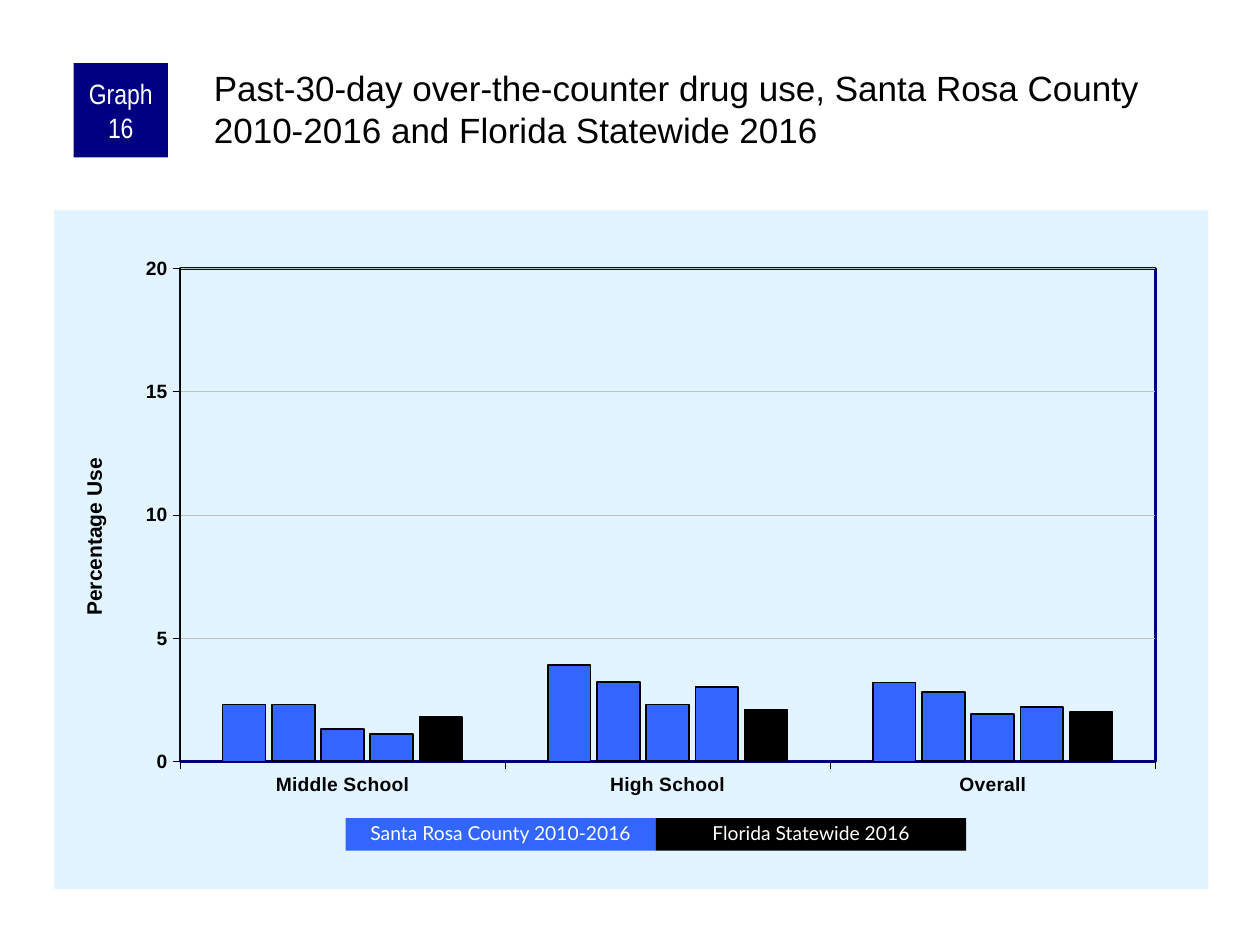
"""Builds the slide on past-30-day over-the-counter drug use."""
from lxml import etree
from pptx import Presentation
from pptx.chart.data import CategoryChartData
from pptx.dml.color import RGBColor
from pptx.enum.chart import XL_CHART_TYPE, XL_TICK_MARK
from pptx.enum.shapes import MSO_SHAPE
from pptx.enum.text import MSO_ANCHOR, MSO_AUTO_SIZE, PP_ALIGN
from pptx.oxml import parse_xml
from pptx.oxml.ns import nsdecls, qn
from pptx.util import Pt

COLUMNS = XL_CHART_TYPE.COLUMN_CLUSTERED
OUTSIDE, NO_TICK = XL_TICK_MARK.OUTSIDE, XL_TICK_MARK.NONE
RECTANGLE = MSO_SHAPE.RECTANGLE
TOP, MIDDLE = MSO_ANCHOR.TOP, MSO_ANCHOR.MIDDLE
LEFT, CENTER = PP_ALIGN.LEFT, PP_ALIGN.CENTER
NO_AUTOSIZE = MSO_AUTO_SIZE.NONE

HEADING = ("Past-30-day over-the-counter drug use, Santa Rosa County "
           "2010-2016 and Florida Statewide 2016")
BADGE = "Graph 16"
AXIS_TITLE = "Percentage Use"
SCHOOLS = ["Middle School", "High School", "Overall"]
SURVEYS = [
    ("Series 1", (2.3, 3.9, 3.2), "county", 0.75),
    ("Series 2", (2.3, 3.2, 2.8), "county", 1),
    ("Series 3", (1.3, 2.3, 1.9), "county", 1),
    ("Series 4", (1.1, 3, 2.2), "county", 1),
    ("Series 5", (1.8, 2.1, 2), "state", 1),
]
LEGEND = [("Santa Rosa County 2010-2016", "county"),
          ("Florida Statewide 2016", "state")]

THEME = {
    "county": "3366FF", "state": "000000", "navy": "000080", "panel": "E1F4FF",
    "grid": "C0C0C0", "ink": "000000", "light": "FFFFFF",
    "font": "Arial", "badge_font": "Arial Narrow", "legend_font": "Lato",
    "heading": 20, "badge": 16, "axis_title": 12, "label": 11, "chart": 8,
}
HEADING_BOX = (120, 36, 570, 60)
BADGE_BOX = (42, 36, 54, 54)
CHART_BOX = (31, 120, 659.5, 388)
LEGEND_BOX = (197.5, 467.5, 177.3, 18.7)
PLOT_LAYOUT = {"x": 0.109, "y": 0.086, "w": 0.845, "h": 0.726}
AXIS_TITLE_LAYOUT = {"x": 0.02, "y": 0.36}


def colour(key):
    return RGBColor.from_string(THEME[key])


def style_font(font, size, ink="ink", face="font", bold=False):
    font.size, font.name, font.bold = Pt(THEME[size]), THEME[face], bold
    font.color.rgb = colour(ink)


def style_line(line, key, width):
    line.color.rgb = colour(key)
    line.width = Pt(width)


def write(frame, text, align=CENTER, anchor=MIDDLE, insets=(7.2, 3.6, 7.2, 3.6),
          spacing=1.0, **font):
    frame.word_wrap, frame.auto_size = True, NO_AUTOSIZE
    frame.vertical_anchor = anchor
    (frame.margin_left, frame.margin_top,
     frame.margin_right, frame.margin_bottom) = map(Pt, insets)
    paragraph = frame.paragraphs[0]
    paragraph.alignment, paragraph.line_spacing = align, spacing
    run = paragraph.add_run()
    run.text = text
    style_font(run.font, **font)


def add_block(slide, box, fill, text, **text_format):
    block = slide.shapes.add_shape(RECTANGLE, *map(Pt, box))
    block.shadow.inherit = False
    block.fill.solid()
    block.fill.fore_color.rgb = colour(fill)
    block.line.fill.background()
    write(block.text_frame, text, ink="light", **text_format)


def manual_layout(parent, position, successors, inner=False):
    for stale in parent.findall(qn("c:layout")):
        parent.remove(stale)
    layout = parse_xml(f"<c:layout {nsdecls('c')}><c:manualLayout/></c:layout>")
    settings = {"layoutTarget": "inner"} if inner else {}
    settings.update(xMode="edge", yMode="edge", **position)
    for tag, value in settings.items():
        etree.SubElement(layout[0], qn(f"c:{tag}")).set("val", str(value))
    parent.insert_element_before(layout, *successors)


def shape_properties(fill="", line=""):
    parts = f'<a:solidFill><a:srgbClr val="{THEME[fill]}"/></a:solidFill>' if fill else "<a:noFill/>"
    stroke = (f'<a:ln w="{Pt(1.5)}"><a:solidFill><a:srgbClr val="{THEME[line]}"/>'
              "</a:solidFill></a:ln>" if line else "<a:ln><a:noFill/></a:ln>")
    return parse_xml(f"<c:spPr {nsdecls('c', 'a')}>{parts}{stroke}</c:spPr>")


def add_usage_chart(slide):
    data = CategoryChartData()
    data.categories = SCHOOLS
    for name, values, *_ in SURVEYS:
        data.add_series(name, values)
    chart = slide.shapes.add_chart(COLUMNS, *map(Pt, CHART_BOX), data).chart
    chart.has_legend = chart.has_title = False
    style_font(chart.font, "chart")

    plot = chart.plots[0]
    plot.gap_width, plot.overlap, plot.vary_by_categories = 200, -15, False
    for series, (_, _, area, outline) in zip(plot.series, SURVEYS):
        series.format.fill.solid()
        series.format.fill.fore_color.rgb = colour(area)
        style_line(series.format.line, "ink", outline)

    percent = chart.value_axis
    for axis in (chart.category_axis, percent):
        axis.major_tick_mark, axis.minor_tick_mark = OUTSIDE, NO_TICK
        style_font(axis.tick_labels.font, "label", bold=True)
        style_line(axis.format.line, "ink", 0.25)
    percent.minimum_scale, percent.maximum_scale, percent.major_unit = 0, 20, 5
    percent.tick_labels.number_format = "0"
    percent.tick_labels.number_format_is_linked = False
    style_line(percent.major_gridlines.format.line, "grid", 0.25)
    title_run = percent.axis_title.text_frame.paragraphs[0].add_run()
    title_run.text = AXIS_TITLE
    style_font(title_run.font, "axis_title", bold=True)
    manual_layout(percent.axis_title._element, AXIS_TITLE_LAYOUT,
                  ("c:overlay", "c:spPr", "c:txPr"))

    space = chart._chartSpace
    area = space.chart.plotArea
    manual_layout(area, PLOT_LAYOUT, ("c:barChart",), inner=True)
    area.append(shape_properties(line="navy"))
    space.chart.addnext(shape_properties(fill="panel"))


def main():
    deck = Presentation()
    deck.slide_width, deck.slide_height = Pt(720), Pt(540)
    slide = deck.slides.add_slide(deck.slide_layouts[5])
    add_usage_chart(slide)
    add_block(slide, BADGE_BOX, "navy", BADGE, insets=(3.6, 0, 3.6, 0),
              size="badge", face="badge_font")
    heading = slide.shapes.title
    heading.left, heading.top, heading.width, heading.height = map(Pt, HEADING_BOX)
    write(heading.text_frame, HEADING, align=LEFT, anchor=TOP,
          insets=(2.2, 2.2, 0, 0), size="heading")
    left, top, width, height = LEGEND_BOX
    for index, (label, fill) in enumerate(LEGEND):
        add_block(slide, (left + index * width, top, width, height), fill, label,
                  spacing=0.9, size="label", face="legend_font")
    deck.save("out.pptx")


if __name__ == "__main__":
    main()
